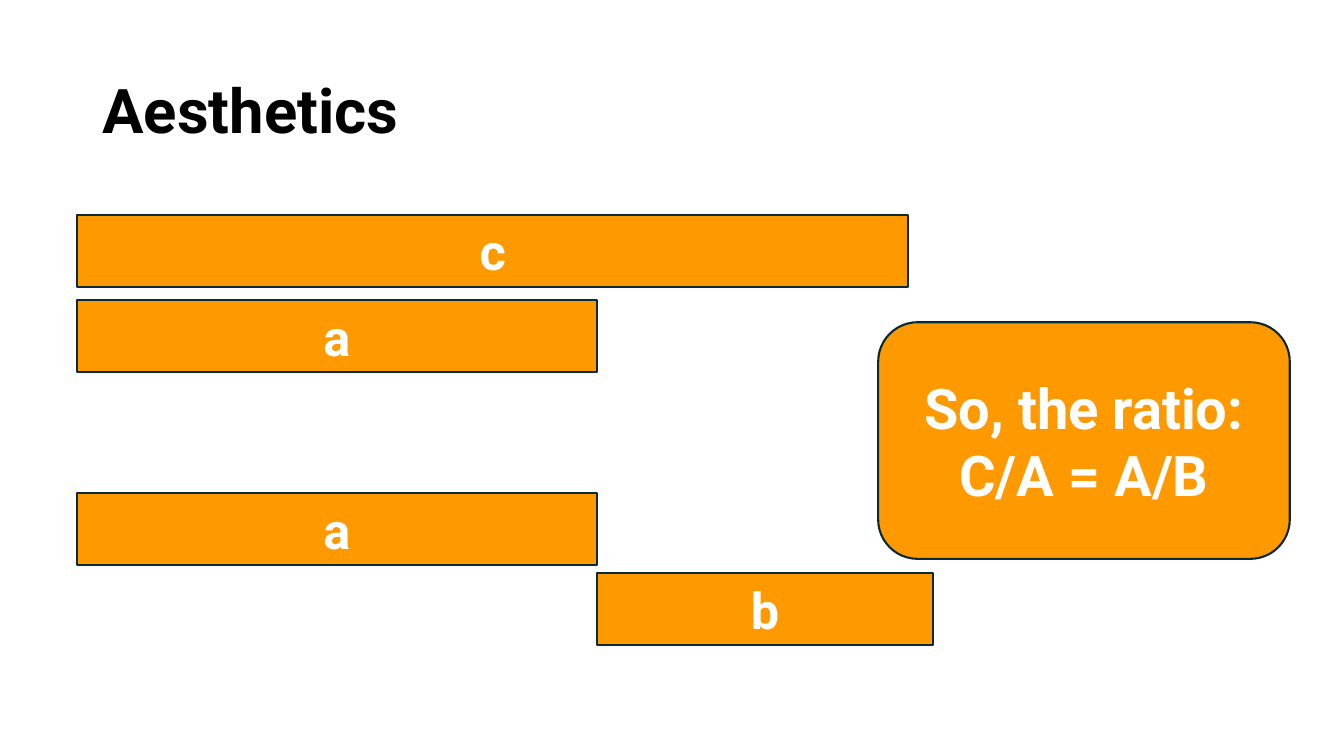
import pptx
import pptx.dml.color
import pptx.enum.shapes
import pptx.enum.text
import pptx.util

Pt = pptx.util.Pt
SHAPES = pptx.enum.shapes.MSO_SHAPE
ALIGN = pptx.enum.text.PP_ALIGN
ANCHOR = pptx.enum.text.MSO_ANCHOR


def color(hex_string):
    return pptx.dml.color.RGBColor.from_string(hex_string)


class SlideBuilder:
    font = "Roboto"
    title_color = "000000"
    fill = "FF9900"
    outline = "092A39"
    label_color = "FFFFFF"

    def __init__(self, presentation):
        self.slide = presentation.slides.add_slide(presentation.slide_layouts[5])

    def set_text(self, shape, text, size, hex_string, alignment, line_spacing=1.0):
        """Fill a shape with bold, vertically centred text."""
        frame = shape.text_frame
        frame.text = text
        frame.word_wrap = True
        frame.auto_size = pptx.enum.text.MSO_AUTO_SIZE.NONE
        frame.vertical_anchor = ANCHOR.MIDDLE
        for paragraph in frame.paragraphs:
            paragraph.alignment = alignment
            paragraph.line_spacing = line_spacing
            for run in paragraph.runs:
                run.font.name = self.font
                run.font.size = Pt(size)
                run.font.bold = True
                run.font.color.rgb = color(hex_string)

    def title(self, text, left, top, width, height):
        shape = self.slide.shapes.title
        shape.left, shape.top = Pt(left), Pt(top)
        shape.width, shape.height = Pt(width), Pt(height)
        self.set_text(shape, text, 44, self.title_color, ALIGN.LEFT, 0.9)

    def box(self, text, left, top, width, height, size=36, kind=SHAPES.RECTANGLE):
        shape = self.slide.shapes.add_shape(
            kind, Pt(left), Pt(top), Pt(width), Pt(height))
        shape.shadow.inherit = False
        shape.fill.solid()
        shape.fill.fore_color.rgb = color(self.fill)
        shape.line.color.rgb = color(self.outline)
        shape.line.width = Pt(1.5)
        self.set_text(shape, text, size, self.label_color, ALIGN.CENTER)


def main():
    presentation = pptx.Presentation()
    presentation.slide_width, presentation.slide_height = Pt(960), Pt(540)
    builder = SlideBuilder(presentation)
    builder.title("Aesthetics", 66, 29, 828, 104.4)

    bar_left, bar_height = 54.9, 51.3
    length_a, length_b, length_c = 371.5, 240, 594
    builder.box("c", bar_left, 153.5, length_c, bar_height)
    builder.box("So, the ratio:\nC/A = A/B", 627.3, 230.2, 294, 169,
                size=40, kind=SHAPES.ROUNDED_RECTANGLE)
    for top in (214.4, 352.2):
        builder.box("a", bar_left, top, length_a, bar_height)
    builder.box("b", bar_left + length_a, 409.6, length_b, bar_height)

    presentation.save("out.pptx")


if __name__ == "__main__":
    main()
